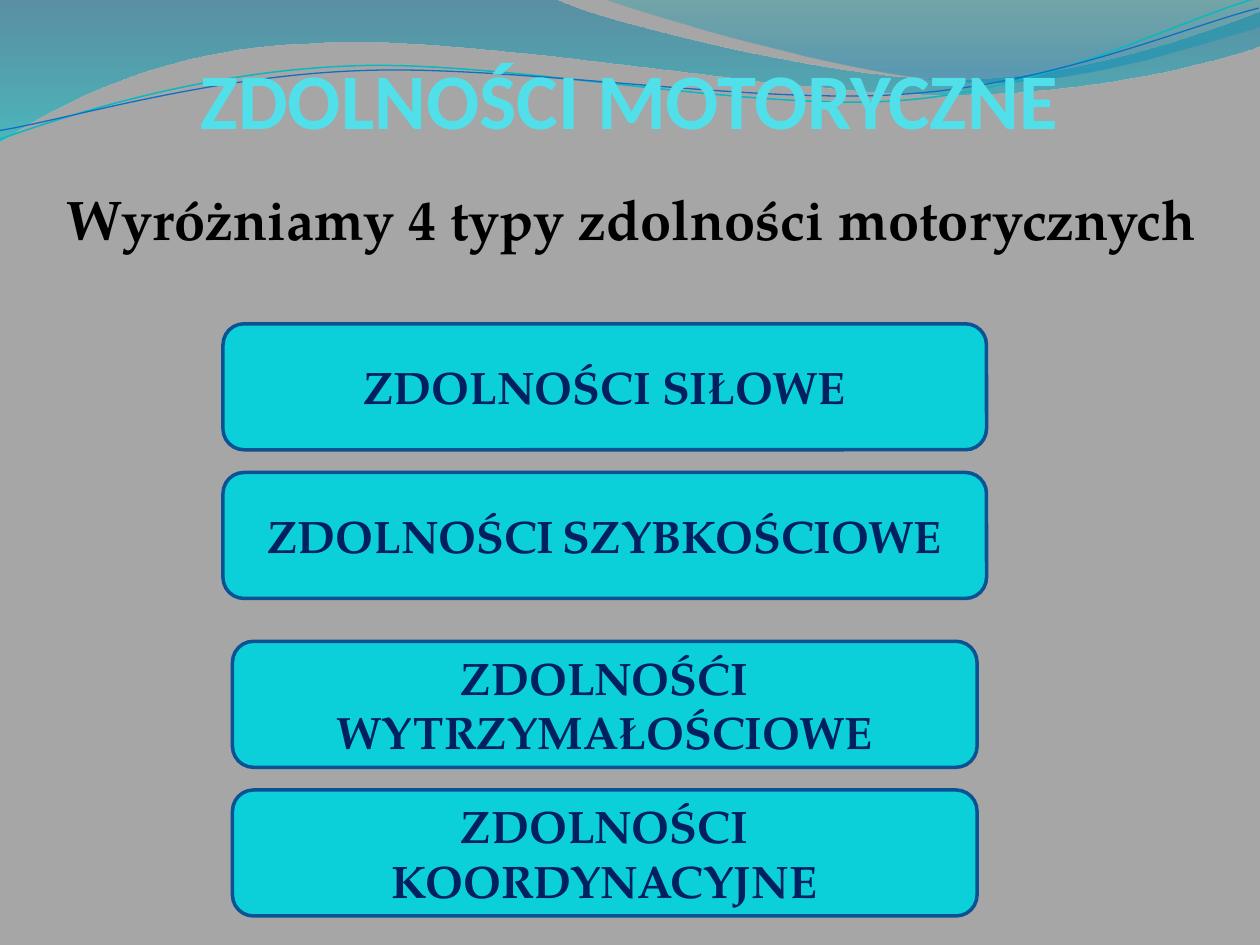
from itertools import chain

from lxml import etree
from pptx import Presentation
from pptx.dml.color import RGBColor
from pptx.enum.shapes import MSO_SHAPE as Shape
from pptx.enum.text import MSO_ANCHOR as Anchor, MSO_AUTO_SIZE as AutoSize, PP_ALIGN as Align
from pptx.oxml.ns import qn
from pptx.util import Inches, Pt

WIDTH, HEIGHT = 10, 7.5
SERIF = "TeX Gyre Pagella"
NAVY, TURQUOISE, BORDER = "002060", "0BD0D9", "0B5292"
WAVE_TILT = -2.7

# Ribbons: start, then segments of one point (line) or three (Bézier curve);
# gradient stops are position, colour, opacity in percent
RIBBONS = [
    ((0, 0),
     [[(4.4, -0.01)],
      [(4.76, 0.17), (6.64, 0.63), (7.58, 0.63)],
      [(8.53, 0.63), (9.58, 0.26), (10, 0.09)],
      [(10.01, 0.36)],
      [(9.83, 0.44), (8.7, 0.76), (7.46, 0.75)],
      [(6.22, 0.75), (3.82, 0.28), (2.57, 0.34)],
      [(1.29, 0.36), (0.46, 0.83), (-0.01, 1.13)]],
     [(0, "0074A1", 45), (1, "00C6CF", 55)]),
    ((4.79, -0.01),
     [[(5.09, 0.11), (6.82, 0.62), (7.69, 0.65)],
      [(8.56, 0.69), (9.61, 0.32), (10, 0.21)],
      [(10, 0)]],
     [(0, "00A1A9", 30), (0.8, "008BBF", 45)]),
]
# Thin waves before tilting: start, curves, colour, line width
WAVES = [
    ((-0.02, 0.87),
     [[(0.47, 0.72), (1.58, 0.41), (2.77, 0.42)],
      [(3.96, 0.42), (5.91, 0.93), (7.12, 0.9)],
      [(8.32, 0.87), (9.39, 0.36), (10, 0.22)]], "0AB8BF", 0.85),
    ((-0.02, 0.8),
     [[(0.46, 0.75), (1.64, 0.45), (2.83, 0.46)],
      [(4.03, 0.46), (5.96, 0.88), (7.16, 0.85)],
      [(8.35, 0.83), (9.42, 0.42), (10.01, 0.3)]], "0F6FC6", 0.75),
]
# Ability boxes, back to front: top, width, text runs with sizes
ABILITIES = [
    (6.27, 5.91, [("ZDOLNOŚCI KOORDYNACYJNE", 26)]),
    (2.57, 6.06, [("ZDOLNOŚCI SIŁOWE", 26)]),
    (3.75, 6.06, [("ZDOLNOŚCI", 26), (" ", 18), ("SZYBKOŚCIOWE", 26)]),
    (5.09, 5.91, [("ZDOLNOŚĆI WYTRZYMAŁOŚCIOWE", 26)]),
]
BOX_CENTRE, BOX_HEIGHT = 4.8, 1


def rgb(colour):
    return RGBColor.from_string(colour)


def add_outline(slide, start, segments, close):
    corners = [(Inches(x), Inches(y)) for x, y in chain([start], *segments)]
    builder = slide.shapes.build_freeform(*corners[0])
    builder.add_line_segments(corners[1:], close=close)
    outline = builder.convert_to_shape()
    outline.shadow.inherit = False
    # Join each three points of a curved segment into one Bézier curve
    lines = iter(list(outline._element.iter(qn("a:lnTo"))))
    for segment in segments:
        steps = [next(lines) for _ in segment]
        if len(steps) == 3:
            curve = etree.Element(qn("a:cubicBezTo"))
            steps[0].addprevious(curve)
            for step in steps:
                curve.append(step[0])
                step.getparent().remove(step)
    return outline


def add_ribbon(slide, start, segments, stops):
    ribbon = add_outline(slide, start, segments, True)
    ribbon.line.fill.background()
    ribbon.fill.gradient()
    ribbon.fill.gradient_angle = 270
    for stop, (position, colour, _) in zip(ribbon.fill.gradient_stops, stops):
        stop.position = position
        stop.color.rgb = rgb(colour)
    # Opacity has no public setting
    tones = ribbon._element.spPr.iter(qn("a:srgbClr"))
    for tone, (_, _, opacity) in zip(tones, stops):
        etree.SubElement(tone, qn("a:alpha")).set("val", str(opacity * 1000))


def add_wave(slide, start, curves, colour, width):
    wave = add_outline(slide, start, curves, False)
    wave.rotation = WAVE_TILT
    wave.fill.background()
    wave.line.color.rgb = rgb(colour)
    wave.line.width = Pt(width)


def style_paragraph(paragraph, font, colour, size=None):
    paragraph.alignment = Align.CENTER
    paragraph.font.name = font
    paragraph.font.bold = True
    paragraph.font.color.rgb = rgb(colour)
    if size:
        paragraph.font.size = Pt(size)


def fill_placeholder(slide, holder, area, text, anchor, inset, font, size, colour):
    slide.shapes._spTree.append(holder._element)  # in front of the waves
    holder.left, holder.top, holder.width, holder.height = map(Inches, area)
    frame = holder.text_frame
    frame.text = text
    frame.word_wrap = True
    frame.auto_size = AutoSize.NONE
    frame.vertical_anchor = anchor
    frame.margin_left, frame.margin_right = 0, Inches(0.02)
    frame.margin_top = frame.margin_bottom = Inches(inset)
    style_paragraph(frame.paragraphs[0], font, colour, size)
    return frame.paragraphs[0]


def add_ability(slide, top, width, runs):
    box = slide.shapes.add_shape(
        Shape.ROUNDED_RECTANGLE, Inches(BOX_CENTRE - width / 2), Inches(top),
        Inches(width), Inches(BOX_HEIGHT))
    box.shadow.inherit = False
    box.fill.solid()
    box.fill.fore_color.rgb = rgb(TURQUOISE)
    box.line.color.rgb = rgb(BORDER)
    box.line.width = Pt(2)
    box.text_frame.word_wrap = True
    box.text_frame.vertical_anchor = Anchor.MIDDLE
    label = box.text_frame.paragraphs[0]
    style_paragraph(label, SERIF, NAVY)
    for text, size in runs:
        run = label.add_run()
        run.text = text
        run.font.size = Pt(size)


def main():
    deck = Presentation()
    deck.slide_width, deck.slide_height = Inches(WIDTH), Inches(HEIGHT)
    slide = deck.slides.add_slide(deck.slide_layouts[0])
    slide.background.fill.solid()
    slide.background.fill.fore_color.rgb = rgb("A6A6A6")

    # Decorative header
    for ribbon in RIBBONS:
        add_ribbon(slide, *ribbon)
    for wave in WAVES:
        add_wave(slide, *wave)

    # Title and introduction
    title, subtitle = slide.placeholders
    fill_placeholder(slide, title, (0.28, 0.13, 9.45, 1.02), "ZDOLNOŚCI MOTORYCZNE",
                     Anchor.BOTTOM, 0, "Calibri", 45, "51E0EA")
    intro = fill_placeholder(slide, subtitle, (0.22, 1.15, 9.61, 6.35),
                             "Wyróżniamy 4 typy zdolności motorycznych",
                             Anchor.TOP, 0.05, SERIF, 32, "000000")
    intro.line_spacing = 1.5
    intro.space_before = Pt(6.4)

    # The four kinds of ability
    for ability in ABILITIES:
        add_ability(slide, *ability)

    deck.save("out.pptx")


if __name__ == "__main__":
    main()
